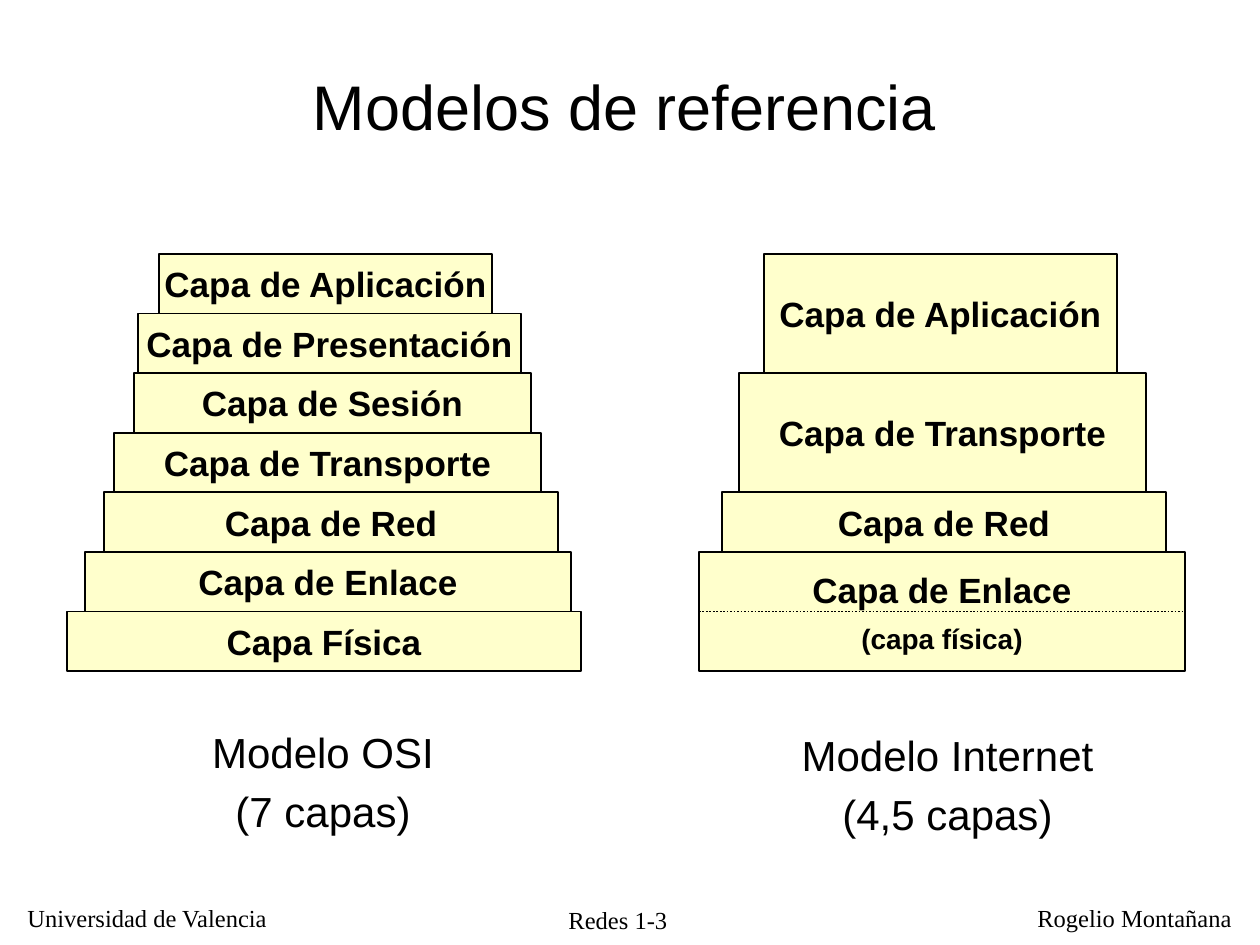
from lxml import etree
from pptx import Presentation
from pptx.dml.color import RGBColor
from pptx.enum.dml import MSO_LINE
from pptx.enum.shapes import MSO_CONNECTOR, MSO_SHAPE
from pptx.enum.text import MSO_ANCHOR, MSO_AUTO_SIZE, PP_ALIGN
from pptx.oxml.ns import qn
from pptx.util import Emu, Pt

LEFT, CENTER = PP_ALIGN.LEFT, PP_ALIGN.CENTER
TOP, MIDDLE = MSO_ANCHOR.TOP, MSO_ANCHOR.MIDDLE
FIXED, GROW = MSO_AUTO_SIZE.NONE, MSO_AUTO_SIZE.SHAPE_TO_FIT_TEXT
RECT, STRAIGHT, DOTS = MSO_SHAPE.RECTANGLE, MSO_CONNECTOR.STRAIGHT, MSO_LINE.ROUND_DOT
BLACK, CREAM = "000000", "FFFFCC"

TITLE = "Modelos de referencia"
STACK_TOP, STACK_BOTTOM, ROWS = 254, 671, 7

# (lines, rows, left, width)
OSI = [
    (["Capa de Aplicación"], 1, 159, 333),
    (["Capa de Presentación"], 1, 138, 383),
    (["Capa de Sesión"], 1, 134, 397),
    (["Capa de Transporte"], 1, 114, 427),
    (["Capa de Red"], 1, 104, 454),
    (["Capa de Enlace"], 1, 85, 486),
    (["Capa Física"], 1, 67, 514),
]
INTERNET = [
    (["Capa de Aplicación"], 2, 764, 353),
    (["Capa de Transporte"], 2, 739, 407),
    (["Capa de Red"], 1, 722, 444),
    (["Capa de Enlace", "(capa física)"], 2, 699, 486),
]
CAPTIONS = [
    (["Modelo OSI", "(7 capas)"], (184, 720, 278, 57)),
    (["Modelo Internet", "(4,5 capas)"], (789, 723, 317, 57)),
]
FOOTERS = [
    ("Redes 1-3", (536, 899, 164, 38), CENTER),
    ("Universidad de Valencia", (15, 897, 268, 41), LEFT),
    ("Rogelio Montañana", (1025, 897, 224, 41), LEFT),
]


def px(n):
    return Emu(round(n * 914400 / 126))


def color(value):
    return RGBColor.from_string(value)


def write(s, lines, sizes, font="Arial", bold=False, align=CENTER,
          anchor=TOP, gap=0, wrap=True, fit=FIXED):
    tf = s.text_frame
    tf.word_wrap = wrap
    tf.auto_size = fit
    tf.vertical_anchor = anchor
    for i, (text, size) in enumerate(zip(lines, sizes)):
        p = tf.add_paragraph() if i else tf.paragraphs[0]
        p.alignment = align
        p.space_before = Pt(gap if i else 0)
        r = p.add_run()
        r.text = text
        r.font.name, r.font.size, r.font.bold = font, Pt(size), bold
        r.font.color.rgb = color(BLACK)


def add_text(slide, box, lines, sizes, **style):
    write(slide.shapes.add_textbox(*map(px, box)), lines, sizes, **style)


def add_stack(slide, layers):
    row_h = (STACK_BOTTOM - STACK_TOP) / ROWS
    y = STACK_TOP
    for lines, rows, x, w in layers:
        s = slide.shapes.add_shape(RECT, px(x), px(y), px(w), px(rows * row_h))
        s.shadow.inherit = False
        s.fill.solid()
        s.fill.fore_color.rgb = color(CREAM)
        s.line.color.rgb = color(BLACK)
        s.line.width = Pt(1)
        write(s, lines, (20, 16), bold=True, anchor=MIDDLE, gap=6.4, wrap=False)
        y += rows * row_h
        if len(lines) > 1:
            add_divider(slide, x, y - row_h, w)


def add_divider(slide, x, y, w):
    line = slide.shapes.add_connector(STRAIGHT, px(x), px(y), px(x + w), px(y))
    line.line.color.rgb = color(BLACK)
    line.line.width = Pt(1)
    line.line.dash_style = DOTS
    etree.SubElement(line._element.spPr, qn("a:effectLst"))


def main():
    prs = Presentation()
    prs.slide_width, prs.slide_height = px(1260), px(945)
    slide = prs.slides.add_slide(prs.slide_layouts[5])
    title = slide.shapes.title
    title.left, title.top, title.width, title.height = map(px, (73, 63, 1103, 84))
    write(title, [TITLE], [36], anchor=MIDDLE)
    for layers in (OSI, INTERNET):
        add_stack(slide, layers)
    for lines, box in CAPTIONS:
        add_text(slide, box, lines, (24, 24), gap=5)
    for text, box, align in FOOTERS:
        centered = align == CENTER
        add_text(slide, box, [text], [14], font="Times New Roman", align=align,
                 wrap=centered, fit=FIXED if centered else GROW)
    prs.save("out.pptx")


if __name__ == "__main__":
    main()
